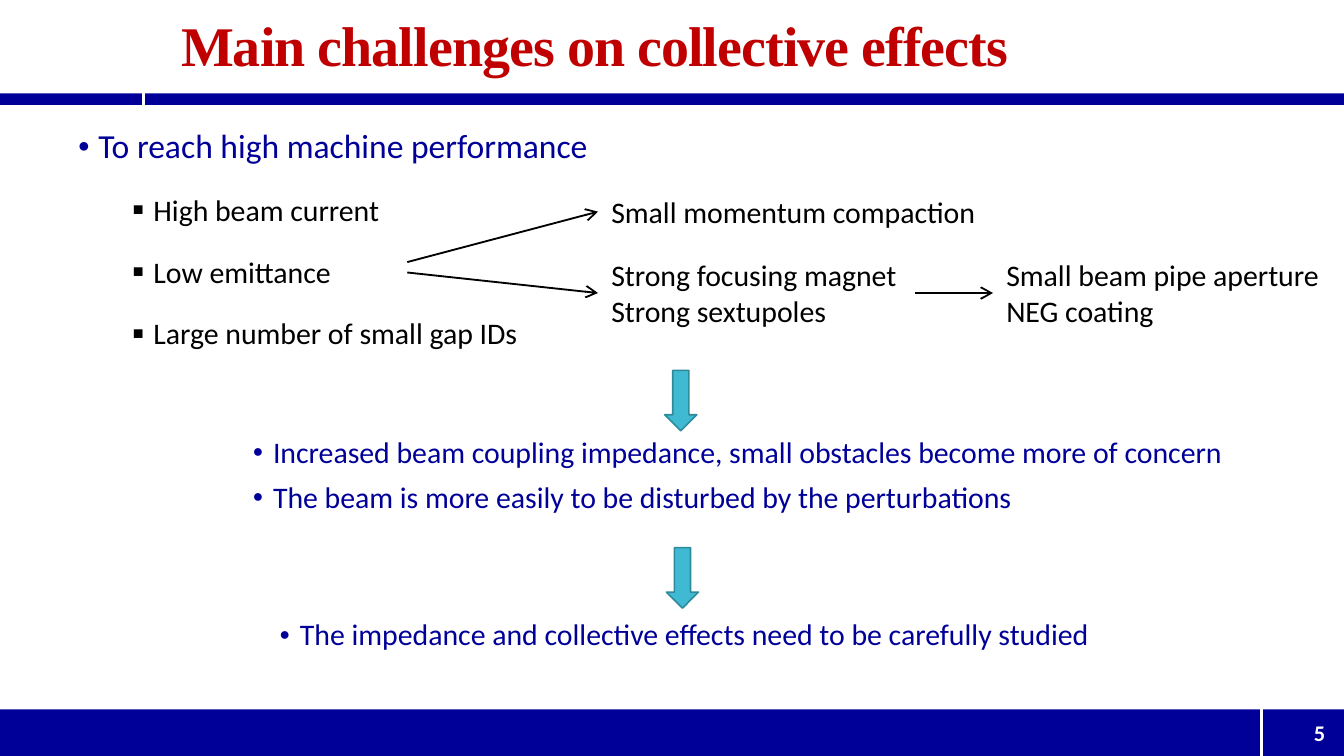
import pptx
import pptx.util
import pptx.dml.color
import pptx.enum.shapes
import pptx.enum.text
import pptx.oxml.ns
from lxml import etree

Pt = pptx.util.Pt
SHAPE = pptx.enum.shapes.MSO_SHAPE
ALIGN = pptx.enum.text.PP_ALIGN
ANCHOR = pptx.enum.text.MSO_ANCHOR
qn = pptx.oxml.ns.qn


def rgb(value):
    return pptx.dml.color.RGBColor.from_string(value)


class SlideBuilder:
    NAVY, RED, BLACK, WHITE = "000099", "C00000", "000000", "FFFFFF"
    TEAL, TEAL_EDGE = "40BAD2", "2F8A9B"
    FONT, TITLE_FONT = "Calibri", "Times New Roman"

    def __init__(self, slide):
        self.slide = slide
        self.shapes = slide.shapes

    def place(self, shape, left, top, width, height):
        shape.left, shape.top = Pt(left), Pt(top)
        shape.width, shape.height = Pt(width), Pt(height)

    def frame(self, shape, anchor=ANCHOR.TOP, insets=(5, 3)):
        frame = shape.text_frame
        frame.word_wrap = True
        frame.auto_size = pptx.enum.text.MSO_AUTO_SIZE.NONE
        frame.vertical_anchor = anchor
        frame.margin_left = frame.margin_right = Pt(insets[0])
        frame.margin_top = frame.margin_bottom = Pt(insets[1])
        return frame

    def style(self, paragraph, size, color, bold=False, font=FONT):
        for run in paragraph.runs:
            run.font.name, run.font.size, run.font.bold = font, Pt(size), bold
            run.font.color.rgb = rgb(color)

    def title(self, text, box):
        title = self.shapes.title
        self.place(title, *box)
        frame = self.frame(title, ANCHOR.MIDDLE)
        frame.text = text
        heading = frame.paragraphs[0]
        heading.alignment, heading.line_spacing = ALIGN.LEFT, 0.9
        self.style(heading, 30, self.RED, True, self.TITLE_FONT)
        heading.runs[0].font._element.set("spc", "-50")

    def bullet(self, paragraph, char, indent):
        props = paragraph._p.get_or_add_pPr()
        props.set("marL", str(Pt(indent)))
        props.set("indent", str(Pt(-11)))
        etree.SubElement(props, qn("a:buSzPct")).set("val", "60000")
        etree.SubElement(props, qn("a:buFont")).set("typeface", "Arial")
        etree.SubElement(props, qn("a:buChar")).set("char", char)

    def bullets(self, shape, box, items, line_spacing=1.1, align=ALIGN.JUSTIFY):
        self.place(shape, *box)
        frame = self.frame(shape)
        frame.text = "\n".join(text for text, *_ in items)
        for index, (paragraph, item) in enumerate(zip(frame.paragraphs, items)):
            _, level, size, color = item
            paragraph.level = level
            self.bullet(paragraph, "■" if level else "●", 40.5 if level else 11)
            paragraph.alignment, paragraph.line_spacing = align, line_spacing
            paragraph.space_before = Pt((12 if level else 3) if index else 0)
            self.style(paragraph, size, color)

    def textbox(self):
        return self.shapes.add_textbox(0, 0, 0, 0)

    def note(self, text, box):
        note = self.textbox()
        self.place(note, *box)
        frame = self.frame(note, insets=(7.2, 3.6))
        frame.text = text
        for paragraph in frame.paragraphs:
            self.style(paragraph, 16, self.BLACK)
        return note

    def page_number(self, text, box):
        number = self.textbox()
        self.place(number, *box)
        frame = self.frame(number, ANCHOR.MIDDLE)
        frame.text = text
        frame.paragraphs[0].alignment = ALIGN.RIGHT
        self.style(frame.paragraphs[0], 12, self.WHITE, True)

    def shape(self, kind, box, fill, edge=None):
        shape = self.shapes.add_shape(kind, *map(Pt, box))
        shape.shadow.inherit = False
        shape.fill.solid()
        shape.fill.fore_color.rgb = rgb(fill)
        if edge:
            shape.line.color.rgb = rgb(edge)
            shape.line.width = Pt(0.85)
        else:
            shape.line.fill.background()
        return shape

    def bar(self, *box):
        self.shape(SHAPE.RECTANGLE, box, self.NAVY)

    def down_arrow(self, *box):
        arrow = self.shape(SHAPE.RIGHT_ARROW, box, self.TEAL, self.TEAL_EDGE)
        arrow.rotation = 90

    def line(self, start, end, color, width):
        line = self.shapes.add_connector(
            pptx.enum.shapes.MSO_CONNECTOR.STRAIGHT, *map(Pt, start + end))
        line.line.color.rgb = rgb(color)
        line.line.width = Pt(width)
        etree.SubElement(line._element.spPr, qn("a:effectLst"))
        return line

    def arrow_to(self, start, target):
        end = (target.left.pt, target.top.pt + target.height.pt / 2)
        arrow = self.line(start, end, self.BLACK, 1)
        arrow.end_connect(target, 1)
        head = etree.SubElement(arrow.line._get_or_add_ln(), qn("a:tailEnd"))
        head.set("type", "arrow")


def main():
    deck = pptx.Presentation()
    deck.slide_width, deck.slide_height = Pt(720), Pt(405)
    page = SlideBuilder(deck.slides.add_slide(deck.slide_layouts[1]))
    navy, black, white = page.NAVY, page.BLACK, page.WHITE

    page.bar(0, 50, 77, 6.3)
    page.bar(77, 50, 643, 6.3)
    page.line((77, 56.3), (77, 48.5), white, 1.5)
    page.bar(0, 380, 644.5, 25)
    page.bar(644.5, 380, 75.5, 25)
    page.line((676, 380), (676, 405), white, 1.5)
    page.page_number("5", (609, 380, 106, 25))

    page.title("Main challenges on collective effects", (92, 6.5, 620.5, 39))
    goals = ["High beam current", "Low emittance", "Large number of small gap IDs"]
    page.bullets(page.slide.placeholders[1], (36.7, 62, 612, 152),
                 [("To reach high machine performance", 0, 18, navy)]
                 + [(goal, 1, 16, black) for goal in goals])

    compaction = page.note("Small momentum compaction", (320.4, 100.1, 211.7, 26.6))
    magnets = page.note("Strong focusing magnet\nStrong sextupoles",
                        (320.4, 134, 185.8, 46))
    aperture = page.note("Small beam pipe aperture\nNEG coating",
                         (532, 134, 185.8, 46))
    page.arrow_to((218.2, 140.4), compaction)
    page.arrow_to((218.2, 146), magnets)
    page.arrow_to((490.3, 157), aperture)

    effects = ["Increased beam coupling impedance, small obstacles become more of concern",
               "The beam is more easily to be disturbed by the perturbations"]
    page.bullets(page.textbox(), (130.3, 227.5, 561.6, 60),
                 [(effect, 0, 16, navy) for effect in effects])
    page.down_arrow(348.5, 206, 32.4, 17.2)

    conclusion = "The impedance and collective effects need to be carefully studied"
    page.bullets(page.textbox(), (144.7, 327, 459.4, 38),
                 [(conclusion, 0, 16, navy)], 1, ALIGN.LEFT)
    page.down_arrow(349.4, 301, 32.4, 17.2)

    deck.save("out.pptx")


if __name__ == "__main__":
    main()
